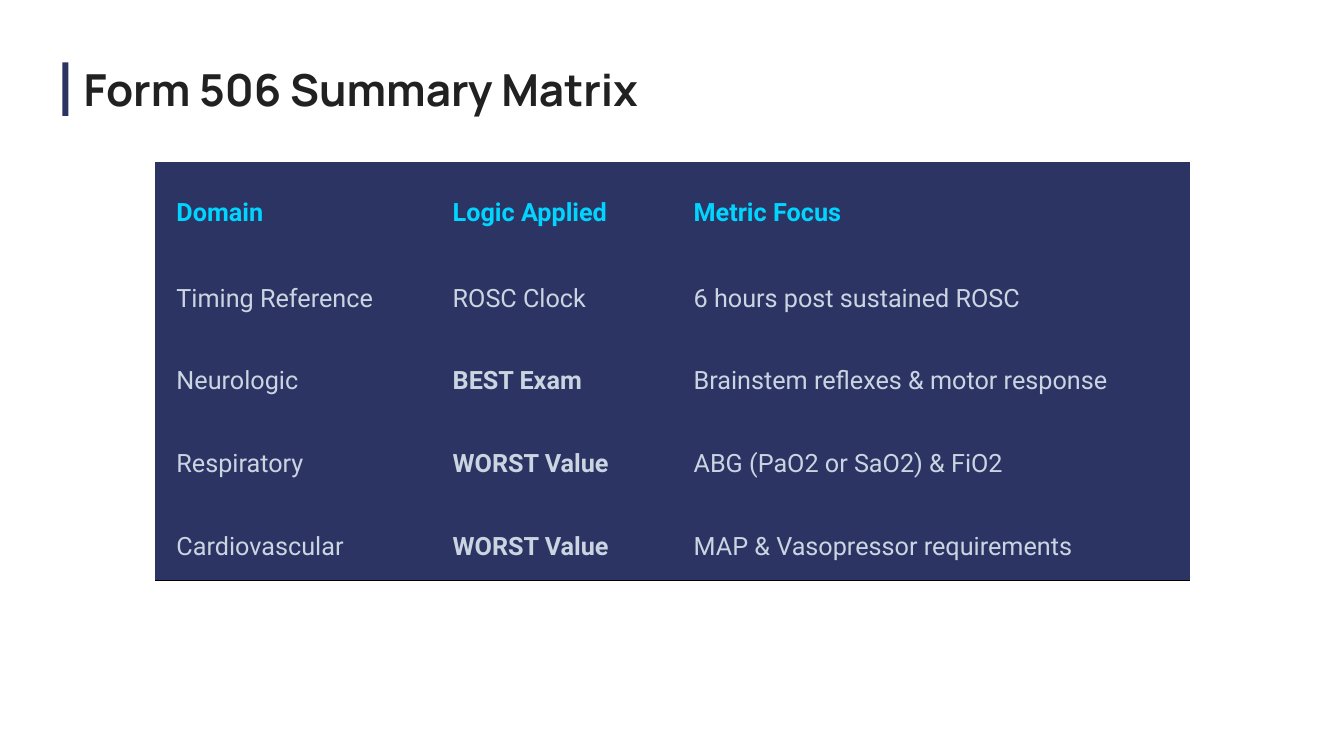
from lxml import etree
from pptx import Presentation
from pptx.dml.color import RGBColor
from pptx.enum import shapes, text
from pptx.oxml.ns import qn
from pptx.util import Inches, Pt

TITLE = "Form 506 Summary Matrix"
ROWS = [
    ("Domain", "Logic Applied", "Metric Focus"),
    ("Timing Reference", "ROSC Clock", "6 hours post sustained ROSC"),
    ("Neurologic", "BEST Exam", "Brainstem reflexes & motor response"),
    ("Respiratory", "WORST Value", "ABG (PaO2 or SaO2) & FiO2"),
    ("Cardiovascular", "WORST Value", "MAP & Vasopressor requirements"),
]
BOLD_CELLS = {"BEST Exam", "WORST Value"}
COL_WIDTHS = (2.74, 2.39, 5.13)
HEADER_HEIGHT, BODY_HEIGHT = 0.87, 0.82

NAVY = RGBColor(0x2C, 0x34, 0x64)
CYAN = RGBColor(0x00, 0xD4, 0xFF)
PALE = RGBColor(0xCB, 0xD5, 0xE1)
INK = RGBColor(0x21, 0x21, 0x21)
BLACK = RGBColor(0, 0, 0)


def set_font(p, name, size, color, bold):
    font = p.runs[0].font
    font.name, font.size, font.bold = name, Pt(size), bold
    font.color.rgb = color


def set_borders(cell):
    """Draw a thin line below the cell and none on its other sides."""
    tc_pr = cell._tc.get_or_add_tcPr()
    for i, side in enumerate(("lnL", "lnR", "lnT", "lnB")):
        ln = etree.Element(qn(f"a:{side}"), w=str(Pt(0.75)))
        if side == "lnB":
            fill = etree.SubElement(ln, qn("a:solidFill"))
            etree.SubElement(fill, qn("a:srgbClr"), val=str(BLACK))
        else:
            etree.SubElement(ln, qn("a:noFill"))
        tc_pr.insert(i, ln)


def add_title(s):
    title = s.shapes.title
    title.left, title.top = Inches(0.83), Inches(0.62)
    title.width, title.height = Inches(12.47), Inches(0.53)
    tf = title.text_frame
    tf.text = TITLE
    tf.margin_left = tf.margin_right = tf.margin_top = tf.margin_bottom = 0
    tf.vertical_anchor = text.MSO_ANCHOR.MIDDLE
    tf.auto_size = text.MSO_AUTO_SIZE.NONE
    p = tf.paragraphs[0]
    p.alignment = text.PP_ALIGN.LEFT
    set_font(p, "Manrope", 31.5, INK, True)

    bar = s.shapes.add_shape(shapes.MSO_SHAPE.RECTANGLE, Inches(0.62), Inches(0.62),
                             Inches(0.06), Inches(0.53))
    bar.shadow.inherit = False
    bar.fill.solid()
    bar.fill.fore_color.rgb = NAVY
    bar.line.fill.background()


def add_matrix(s):
    heights = [HEADER_HEIGHT] + [BODY_HEIGHT] * (len(ROWS) - 1)
    table = s.shapes.add_table(len(ROWS), len(COL_WIDTHS), Inches(1.54), Inches(1.61),
                               Inches(sum(COL_WIDTHS)), Inches(sum(heights))).table
    table.horz_banding = False
    for col, width in zip(table.columns, COL_WIDTHS):
        col.width = Inches(width)
    for i, (values, height) in enumerate(zip(ROWS, heights)):
        header = i == 0
        table.rows[i].height = Inches(height)
        for j, value in enumerate(values):
            cell = table.cell(i, j)
            cell.text = value
            cell.margin_left = cell.margin_right = Inches(0.21)
            cell.margin_top = cell.margin_bottom = Inches(0.21 if header else 0.19)
            cell.fill.solid()
            cell.fill.fore_color.rgb = NAVY
            set_borders(cell)
            p = cell.text_frame.paragraphs[0]
            p.line_spacing = 1.5
            set_font(p, "Roboto", 18, CYAN if header else PALE,
                     header or value in BOLD_CELLS)


def main():
    prs = Presentation()
    prs.slide_width, prs.slide_height = Inches(13.33), Inches(7.5)
    s = prs.slides.add_slide(prs.slide_layouts[5])
    add_title(s)
    add_matrix(s)
    prs.save("out.pptx")


if __name__ == "__main__":
    main()
